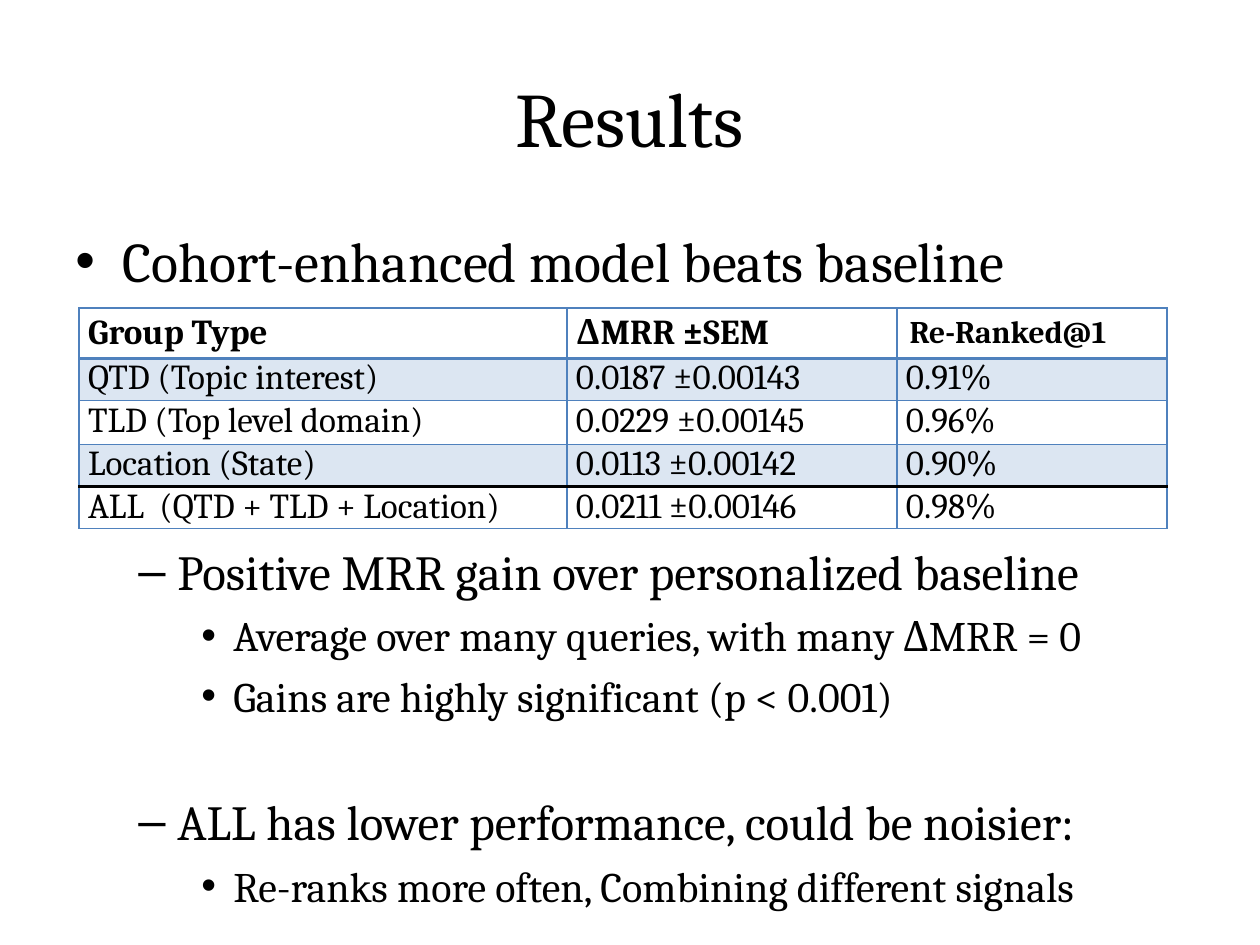
from lxml import etree
from pptx import Presentation
from pptx import util as u
from pptx.dml.color import RGBColor
from pptx.enum import text
from pptx.oxml.ns import qn

FONT = "Cambria"
INK = {"black": "000000", "blue": "4F81BD", "band": "DCE6F2"}
ALIGN = text.PP_ALIGN
MID = text.MSO_ANCHOR.MIDDLE

# Level: text size, left indent px, hanging px, bullet
LEVELS = [(32, 47, 47, "•"), (28, 102, 39, "–"), (24, 158, 32, "•")]

# Level, wording, extra space in points above the line
POINTS = [
    (0, "Cohort-enhanced model beats baseline", 0),
    (1, "Positive MRR gain over personalized baseline", 135),
    (2, "Average over many queries, with many ΔMRR = 0", 0),
    (2, "Gains are highly significant (p < 0.001)", 0),
    (1, "ALL has lower performance, could be noisier:", 34),
    (2, "Re-ranks more often, Combining different signals", 0),
]

ROWS = [
    ("Group Type", "ΔMRR ±SEM", "Re-Ranked@1"),
    ("QTD (Topic interest)", "0.0187 ±0.00143", "0.91%"),
    ("TLD (Top level domain)", "0.0229 ±0.00145", "0.96%"),
    ("Location (State)", "0.0113 ±0.00142", "0.90%"),
    ("ALL  (QTD + TLD + Location)", "0.0211 ±0.00146", "0.98%"),
]
WIDTHS = [488, 330, 270]
HEIGHTS = [50, 42, 44, 42, 42]


def px(n):
    return u.Emu(round(n * 914400 / 126))


def write(par, words, size=20, bold=False, align=ALIGN.LEFT, before=0, after=0):
    par.alignment = align
    par.space_before = u.Pt(before)
    par.space_after = u.Pt(after)
    run = par.add_run()
    run.text = words
    font = run.font
    font.name, font.size, font.bold = FONT, u.Pt(size), bold
    font.color.rgb = RGBColor.from_string(INK["black"])


def box(slide, x, y, w, h):
    frame = slide.shapes.add_textbox(px(x), px(y), px(w), px(h)).text_frame
    frame.word_wrap = True
    return frame


def bullet(par, mark, left, hang):
    props = par._p.get_or_add_pPr()
    props.set("marL", str(px(left)))
    props.set("indent", str(-px(hang)))
    etree.SubElement(props, qn("a:buFont")).set("typeface", "Arial")
    etree.SubElement(props, qn("a:buChar")).set("char", mark)


def outline(frame):
    for i, (level, words, gap) in enumerate(POINTS):
        par = frame.add_paragraph() if i else frame.paragraphs[0]
        size, left, hang, mark = LEVELS[level]
        write(par, words, size, before=round(size * 0.234 + gap, 1))
        bullet(par, mark, left, hang)


def border(cell, side, color, width):
    line = etree.SubElement(cell._tc.get_or_add_tcPr(), qn("a:ln" + side))
    line.set("w", str(u.Pt(width)))
    fill = etree.SubElement(line, qn("a:solidFill"))
    etree.SubElement(fill, qn("a:srgbClr")).set("val", INK[color])


def edges(cell, row):
    # Thick rules lie under the header and above the last row
    rules = {1: ("blue", 2), len(ROWS) - 1: ("black", 2.25)}
    thin = ("blue", 1)
    for side, rule in (("L", thin), ("R", thin),
                       ("T", rules.get(row, thin)),
                       ("B", rules.get(row + 1, thin))):
        border(cell, side, *rule)


def style(cell, words, row, col):
    head = row == 0
    last = head and col == 2
    if not last:
        cell.margin_left = cell.margin_right = px(9)
        cell.margin_top = cell.margin_bottom = 0
    if head:
        cell.vertical_anchor = MID
    flush = last or (col == 1 and not head)
    write(cell.text_frame.paragraphs[0], words, 18 if last else 20, head,
          ALIGN.LEFT if flush else ALIGN.JUSTIFY, after=0 if last else 4)
    edges(cell, row)
    if row % 2:
        cell.fill.solid()
        cell.fill.fore_color.rgb = RGBColor.from_string(INK["band"])
    else:
        cell.fill.background()


def grid(slide, x, y):
    table = slide.shapes.add_table(
        len(ROWS), len(WIDTHS), px(x), px(y),
        px(sum(WIDTHS)), px(sum(HEIGHTS))).table
    table.first_row = table.horz_banding = False
    for col, w in zip(table.columns, WIDTHS):
        col.width = px(w)
    for row, h in zip(table.rows, HEIGHTS):
        row.height = px(h)
    for r, line in enumerate(ROWS):
        for c, words in enumerate(line):
            style(table.cell(r, c), words, r, c)


def main():
    deck = Presentation()
    deck.slide_width, deck.slide_height = px(1260), px(945)
    slide = deck.slides.add_slide(deck.slide_layouts[6])

    # Title
    title = box(slide, 63, 38, 1134, 157)
    title.vertical_anchor = MID
    write(title.paragraphs[0], "Results", 44, align=ALIGN.CENTER)

    # Bullets, with room left for the table
    outline(box(slide, 63, 220, 1134, 725))

    # Results table
    grid(slide, 79, 308)

    deck.save("out.pptx")


if __name__ == "__main__":
    main()
